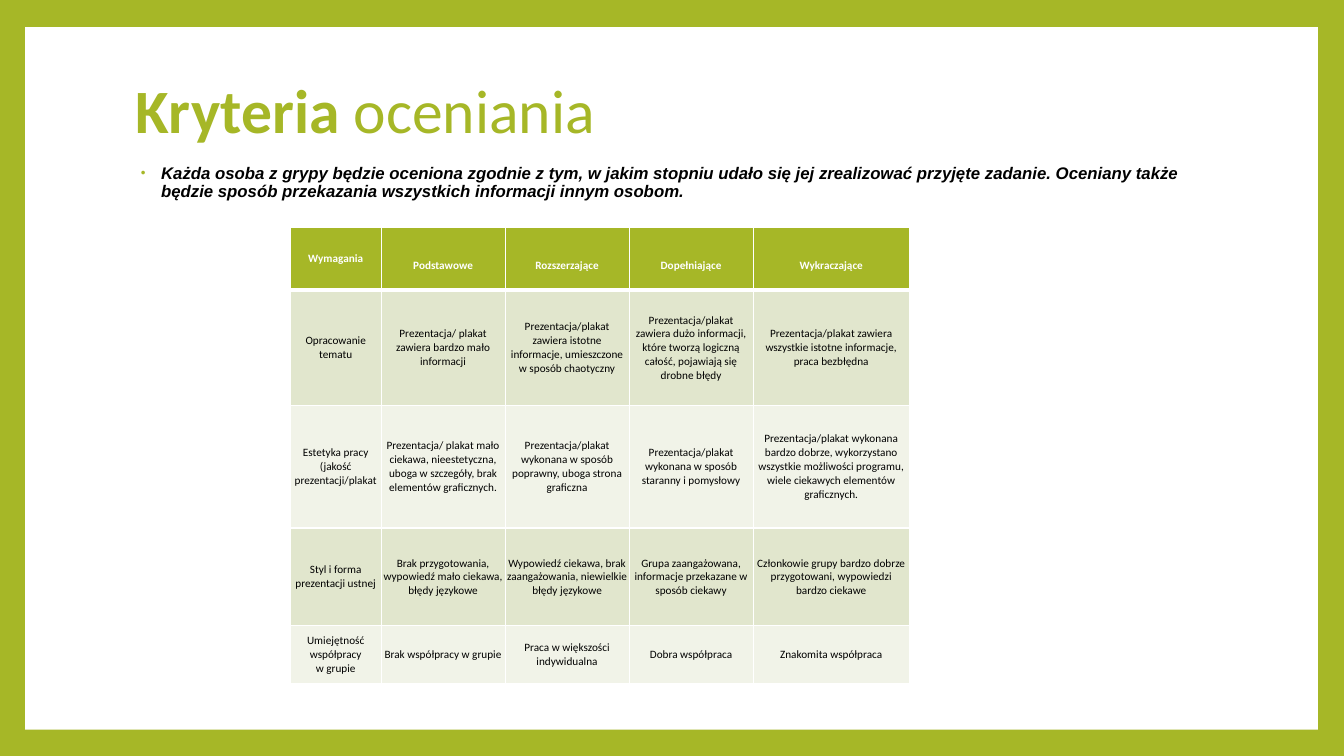
from dataclasses import dataclass

from lxml.etree import SubElement
from pptx import Presentation
from pptx.dml.color import RGBColor
from pptx.enum.shapes import MSO_SHAPE
from pptx.enum.text import MSO_ANCHOR, PP_ALIGN
from pptx.oxml.ns import qn
from pptx.util import Inches, Pt


@dataclass(frozen=True)
class Theme:
    accent: str = "A6B727"
    paper: str = "FFFFFF"
    ink: str = "000000"
    band_dark: str = "E1E6CD"
    band_light: str = "F1F3E8"
    heading_font: str = "Calibri"
    body_font: str = "Arial"
    title_size: int = 44
    body_size: int = 12
    table_size: int = 8
    rule: int = 1
    header_rule: int = 3


THEME = Theme()

INTRO = (
    "Każda osoba z grypy będzie oceniona zgodnie z tym, w jakim stopniu udało się jej "
    "zrealizować przyjęte zadanie. Oceniany także będzie sposób przekazania wszystkich "
    "informacji innym osobom."
)
COLUMN_WIDTHS = [0.9, 1.23, 1.23, 1.23, 1.55]
ROW_HEIGHTS = [0.62, 1.14, 1.22, 0.97, 0.57]
CRITERIA = [
    ["Wymagania", "Podstawowe", "Rozszerzające", "Dopełniające", "Wykraczające"],
    [
        "Opracowanie tematu",
        "Prezentacja/ plakat zawiera bardzo mało informacji",
        "Prezentacja/plakat zawiera istotne informacje, umieszczone w sposób chaotyczny",
        "Prezentacja/plakat zawiera dużo informacji, które tworzą logiczną całość, "
        "pojawiają się drobne błędy",
        "Prezentacja/plakat zawiera wszystkie istotne informacje, praca bezbłędna",
    ],
    [
        "Estetyka pracy (jakość prezentacji/plakat",
        "Prezentacja/ plakat mało ciekawa, nieestetyczna, uboga w szczegóły, "
        "brak elementów graficznych.",
        "Prezentacja/plakat wykonana w sposób poprawny, uboga strona graficzna",
        "Prezentacja/plakat wykonana w sposób staranny i pomysłowy",
        "Prezentacja/plakat wykonana bardzo dobrze, wykorzystano wszystkie możliwości "
        "programu, wiele ciekawych elementów graficznych.",
    ],
    [
        "Styl i forma prezentacji ustnej",
        "Brak przygotowania, wypowiedź mało ciekawa, błędy językowe",
        "Wypowiedź ciekawa, brak zaangażowania, niewielkie błędy językowe",
        "Grupa zaangażowana, informacje przekazane w sposób ciekawy",
        "Członkowie grupy bardzo dobrze przygotowani, wypowiedzi bardzo ciekawe",
    ],
    [
        "Umiejętność współpracy\vw grupie",
        "Brak współpracy w grupie",
        "Praca w większości indywidualna",
        "Dobra współpraca",
        "Znakomita współpraca",
    ],
]


def rgb(color):
    return RGBColor.from_string(color)


def style_run(r, font, size, color, bold=False, italic=False):
    r.font.name = font
    r.font.size = Pt(size)
    r.font.color.rgb = rgb(color)
    r.font.bold = bold
    r.font.italic = italic


def add_text_frame(s, box):
    tf = s.shapes.add_textbox(*map(Inches, box)).text_frame
    tf.word_wrap = True
    tf.paragraphs[0].line_spacing = 0.9
    return tf


def add_frame(s, box):
    s.background.fill.solid()
    s.background.fill.fore_color.rgb = rgb(THEME.accent)
    sp = s.shapes.add_shape(MSO_SHAPE.RECTANGLE, *map(Inches, box))
    sp.shadow.inherit = False
    sp.fill.solid()
    sp.fill.fore_color.rgb = rgb(THEME.paper)
    sp.line.fill.background()


def add_title(s, box):
    tf = add_text_frame(s, box)
    tf.vertical_anchor = MSO_ANCHOR.MIDDLE
    for text, bold in [("Kryteria", True), (" oceniania", False)]:
        r = tf.paragraphs[0].add_run()
        r.text = text
        style_run(r, THEME.heading_font, THEME.title_size, THEME.accent, bold)


def add_intro(s, box):
    p = add_text_frame(s, box).paragraphs[0]
    p.text = INTRO
    style_run(p.runs[0], THEME.body_font, THEME.body_size, THEME.ink, True, True)
    pPr = p._p.get_or_add_pPr()
    pPr.set("marL", str(Inches(0.25)))
    pPr.set("indent", str(Inches(-0.2)))
    bullet_color = SubElement(pPr, qn("a:buClr"))
    SubElement(bullet_color, qn("a:srgbClr"), val=THEME.accent)
    SubElement(pPr, qn("a:buSzPct"), val="80000")
    SubElement(pPr, qn("a:buFont"), typeface=THEME.body_font)
    SubElement(pPr, qn("a:buChar"), char="•")


def set_borders(cell, top, bottom):
    tcPr = cell._tc.get_or_add_tcPr()
    widths = {"lnL": THEME.rule, "lnR": THEME.rule, "lnT": top, "lnB": bottom}
    for side, width in widths.items():
        ln = SubElement(tcPr, qn(f"a:{side}"), w=str(Pt(width)))
        fill = SubElement(ln, qn("a:solidFill"))
        SubElement(fill, qn("a:srgbClr"), val=THEME.paper)


def style_cell(cell, row, col):
    header = row == 0
    set_borders(
        cell,
        THEME.header_rule if row == 1 else THEME.rule,
        THEME.header_rule if header else THEME.rule,
    )
    band = THEME.band_dark if row % 2 else THEME.band_light
    cell.fill.solid()
    cell.fill.fore_color.rgb = rgb(THEME.accent if header else band)
    cell.vertical_anchor = MSO_ANCHOR.MIDDLE
    cell.margin_left = cell.margin_right = cell.margin_bottom = Inches(0.01)
    cell.margin_top = Inches(0.15 if header and col else 0.01)
    p = cell.text_frame.paragraphs[0]
    p.alignment = PP_ALIGN.CENTER
    for r in p.runs:
        color = THEME.paper if header else THEME.ink
        style_run(r, THEME.heading_font, THEME.table_size, color, header)


def add_criteria_table(s, box):
    shape = s.shapes.add_table(len(ROW_HEIGHTS), len(COLUMN_WIDTHS), *map(Inches, box))
    table = shape.table
    for column, width in zip(table.columns, COLUMN_WIDTHS):
        column.width = Inches(width)
    for row, height in zip(table.rows, ROW_HEIGHTS):
        row.height = Inches(height)
    for i, texts in enumerate(CRITERIA):
        for j, text in enumerate(texts):
            cell = table.cell(i, j)
            cell.text_frame.text = text
            style_cell(cell, i, j)


def main():
    prs = Presentation()
    prs.slide_width, prs.slide_height = Inches(13.33), Inches(7.5)
    s = prs.slides.add_slide(prs.slide_layouts[6])
    add_frame(s, (0.25, 0.27, 12.82, 6.97))
    add_title(s, (1.25, 0.67, 10.8, 0.92))
    add_intro(s, (1.25, 1.59, 10.8, 0.6))
    add_criteria_table(s, (2.88, 2.26, sum(COLUMN_WIDTHS), sum(ROW_HEIGHTS)))
    prs.save("out.pptx")


if __name__ == "__main__":
    main()
